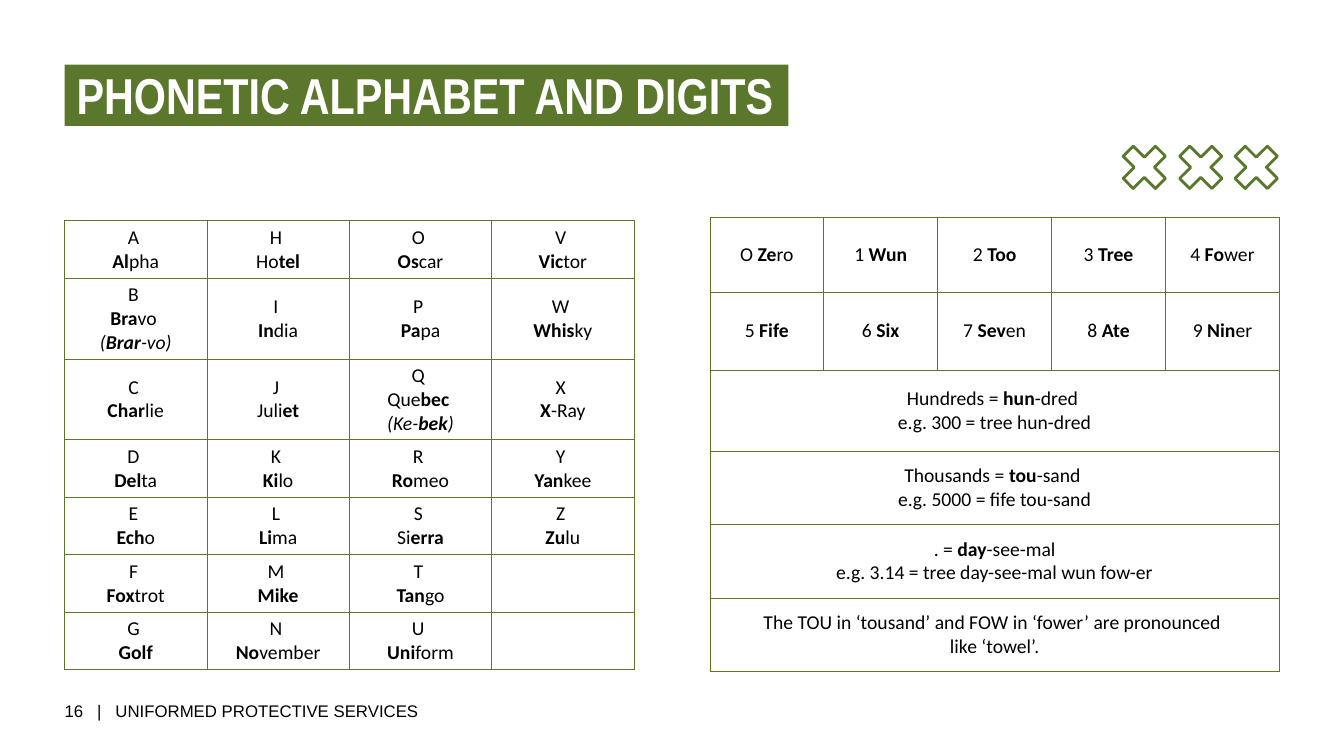
"""Build the phonetic alphabet and digits slide."""
from dataclasses import dataclass

from lxml import etree
from pptx import Presentation
from pptx.dml.color import RGBColor
from pptx.enum.shapes import MSO_SHAPE
from pptx.enum.text import MSO_ANCHOR, MSO_AUTO_SIZE, PP_ALIGN
from pptx.oxml.ns import qn
from pptx.util import Inches, Pt

RECTANGLE = MSO_SHAPE.RECTANGLE
MIDDLE = MSO_ANCHOR.MIDDLE
TOP = MSO_ANCHOR.TOP
LEFT = PP_ALIGN.LEFT
CENTER = PP_ALIGN.CENTER
GROW = MSO_AUTO_SIZE.SHAPE_TO_FIT_TEXT

COLORS = {"green": "5B772B", "white": "FFFFFF", "black": "000000"}

PAGE_LEFT = 0.64
TABLE_WIDTH = 5.65
LETTERS_PER_COLUMN = 7
WORDS = [
    "*Al*pha", "*Bra*vo \v(*Brar*-vo)", "*Char*lie", "*Del*ta", "*Ech*o", "*Fox*trot", "*Golf*",
    "Ho*tel*", "*In*dia", "Juli*et*", "*Ki*lo", "*Li*ma", "*Mike*", "*No*vember",
    "*Os*car", "*Pa*pa", "Que*bec* \v(Ke-*bek*)", "*Ro*meo", "Si*erra*", "*Tan*go", "*Uni*form",
    "*Vic*tor", "*Whis*ky", "*X*-Ray", "*Yan*kee", "*Zu*lu",
]
DIGITS = [
    ["O *Ze*ro", "1 *Wun*", "2 *Too*", "3 *Tree*", "4 *Fo*wer"],
    ["5 *Fife*", "6 *Six*", "7 *Sev*en", "8 *Ate*", "9 *Nin*er"],
]
RULES = [
    "Hundreds = *hun*-dred \ve.g. 300 = tree hun-dred",
    "Thousands = *tou*-sand \ve.g. 5000 = fife tou-sand",
    ". = *day*-see-mal\ve.g. 3.14 = tree day-see-mal wun fow-er",
    "The TOU in ‘tousand’ and FOW in ‘fower’ are pronounced \vlike ‘towel’.",
]
CROSS_CENTERS = [12.46, 11.91, 11.35]
CROSS_MIDDLE = 1.66
CROSS_OUTLINE = [
    (0.11, 0.21), (0.21, 0.11), (0.1, 0), (0.21, -0.11), (0.11, -0.21), (0, -0.1),
    (-0.11, -0.21), (-0.21, -0.11), (-0.1, 0), (-0.21, 0.11), (-0.11, 0.21), (0, 0.1),
]


@dataclass(frozen=True)
class TextStyle:
    font: str
    size: float
    color: str
    bold: bool = False


@dataclass(frozen=True)
class Grid:
    left: float
    top: float
    row_heights: list[float]
    rows: list[list[str]]


TITLE_STYLE = TextStyle("Arial Narrow", 36, "white", True)
FOOTER_STYLE = TextStyle("Arial", 12, "black")
CELL_STYLE = TextStyle("Calibri", 14, "black")


def rgb(name: str) -> RGBColor:
    return RGBColor.from_string(COLORS[name])


def add_run(paragraph, text: str, style: TextStyle, bold: bool, italic: bool = False) -> None:
    run = paragraph.add_run()
    run.text = text
    run.font.name = style.font
    run.font.size = Pt(style.size)
    run.font.color.rgb = rgb(style.color)
    run.font.bold = bold
    run.font.italic = italic


def add_marked_text(paragraph, marked: str) -> None:
    paragraph.alignment = CENTER
    for line_number, line in enumerate(marked.split("\v")):
        if line_number:
            paragraph.add_line_break()
        for part_number, part in enumerate(line.split("*")):
            if part:
                add_run(paragraph, part, CELL_STYLE, part_number % 2 == 1, line.startswith("("))


def outline_cell(cell) -> None:
    properties = cell._tc.get_or_add_tcPr()
    for side in ("a:lnL", "a:lnR", "a:lnT", "a:lnB"):
        border = etree.SubElement(properties, qn(side), w=str(Pt(0.5)))
        fill = etree.SubElement(border, qn("a:solidFill"))
        etree.SubElement(fill, qn("a:srgbClr"), val=COLORS["green"])


def draw_grid(slide, grid: Grid) -> None:
    column_count = len(grid.rows[0])
    table = slide.shapes.add_table(
        len(grid.rows), column_count, Inches(grid.left), Inches(grid.top),
        Inches(TABLE_WIDTH), Inches(sum(grid.row_heights)),
    ).table
    table.first_row = False
    table.horz_banding = False
    for row, height in zip(table.rows, grid.row_heights):
        row.height = Inches(height)
    for row_number, texts in enumerate(grid.rows):
        for column in range(column_count):
            cell = table.cell(row_number, column)
            outline_cell(cell)
            cell.fill.background()
            cell.vertical_anchor = MIDDLE
        if len(texts) < column_count:
            table.cell(row_number, 0).merge(table.cell(row_number, column_count - 1))
        for column, text in enumerate(texts):
            frame = table.cell(row_number, column).text_frame
            for number, marked in enumerate(text.split("\n")):
                add_marked_text(frame.add_paragraph() if number else frame.paragraphs[0], marked)


def alphabet_rows() -> list[list[str]]:
    columns = -(-len(WORDS) // LETTERS_PER_COLUMN)
    entries = [f"{word.strip('*')[0]} \n{word}" for word in WORDS]
    entries += [""] * (columns * LETTERS_PER_COLUMN - len(WORDS))
    return [entries[row::LETTERS_PER_COLUMN] for row in range(LETTERS_PER_COLUMN)]


def write_line(shape, text: str, style: TextStyle, anchor, margins: tuple[float, float], wrap: bool) -> None:
    frame = shape.text_frame
    frame.margin_left, frame.margin_right = (Inches(margin) for margin in margins)
    frame.margin_top = frame.margin_bottom = 0
    frame.word_wrap = wrap
    frame.auto_size = GROW
    frame.vertical_anchor = anchor
    frame.paragraphs[0].alignment = LEFT
    add_run(frame.paragraphs[0], text, style, style.bold)


def draw_crosses(slide) -> None:
    builder = None
    for center in CROSS_CENTERS:
        corners = [(Inches(center + x), Inches(CROSS_MIDDLE + y)) for x, y in CROSS_OUTLINE]
        if builder is None:
            builder = slide.shapes.build_freeform(*corners[0])
        else:
            builder.move_to(*corners[0])
        builder.add_line_segments(corners[1:], close=True)
    crosses = builder.convert_to_shape()
    crosses.shadow.inherit = False
    crosses.fill.background()
    crosses.line.color.rgb = rgb("green")
    crosses.line.width = Pt(2)


def main() -> None:
    presentation = Presentation()
    presentation.slide_width = Inches(13.33)
    presentation.slide_height = Inches(7.5)
    slide = presentation.slides.add_slide(presentation.slide_layouts[6])

    title = slide.shapes.add_shape(
        RECTANGLE, Inches(PAGE_LEFT), Inches(0.64), Inches(7.18), Inches(0.61))
    title.shadow.inherit = False
    title.fill.solid()
    title.fill.fore_color.rgb = rgb("green")
    title.line.fill.background()
    write_line(title, "PHONETIC ALPHABET AND DIGITS", TITLE_STYLE, TOP, (0.12, 0.08), False)

    footer = slide.shapes.add_textbox(
        Inches(PAGE_LEFT), Inches(6.95), Inches(3.82), Inches(0.2))
    write_line(footer, "16   |   UNIFORMED PROTECTIVE SERVICES", FOOTER_STYLE, MIDDLE, (0, 0), True)

    draw_crosses(slide)
    alphabet_heights = [0.57, 0.77, 0.77, 0.57, 0.57, 0.57, 0.57]
    digit_heights = [0.74, 0.77, 0.81, 0.72, 0.74, 0.72]
    draw_grid(slide, Grid(PAGE_LEFT, 2.19, alphabet_heights, alphabet_rows()))
    draw_grid(slide, Grid(7.04, 2.16, digit_heights, DIGITS + [[rule] for rule in RULES]))

    presentation.save("out.pptx")


if __name__ == "__main__":
    main()
